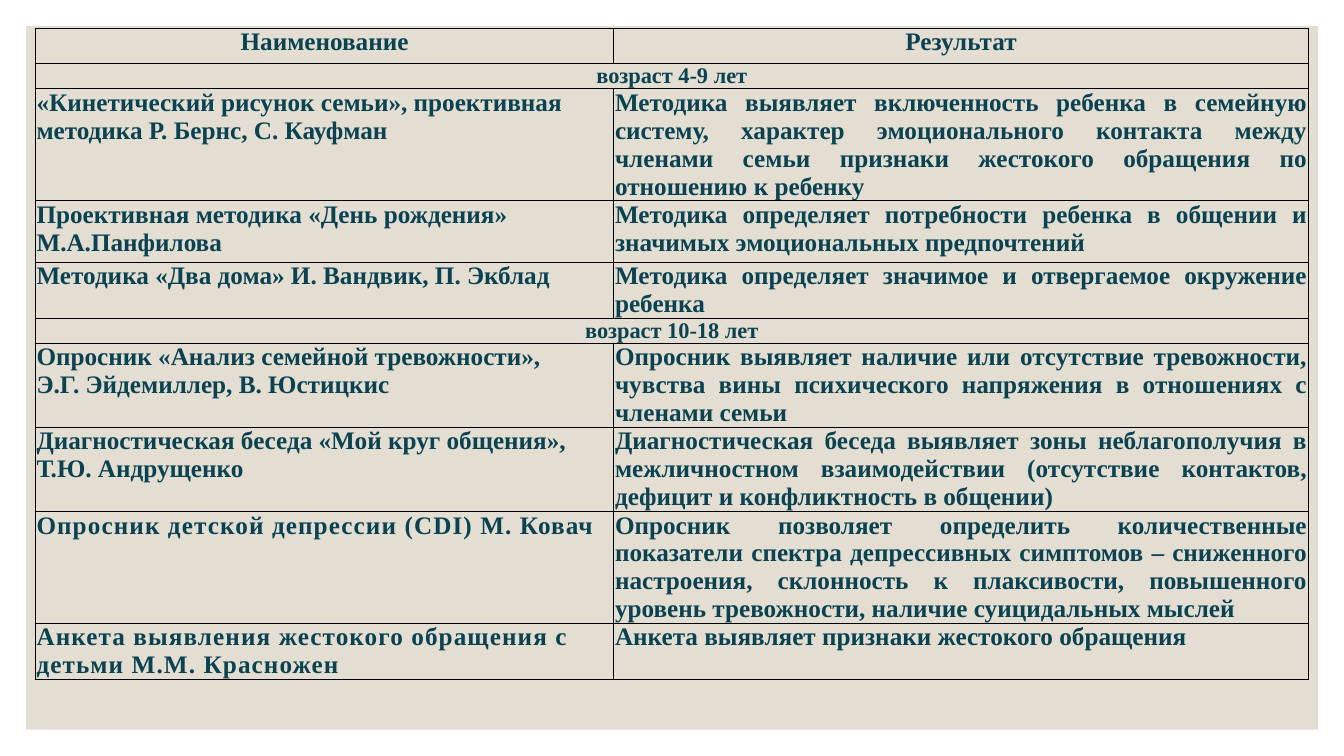
from lxml import etree
from pptx import Presentation
from pptx.dml.color import RGBColor
from pptx.enum.shapes import MSO_SHAPE
from pptx.enum.text import PP_ALIGN
from pptx.oxml.ns import qn
from pptx.util import Cm, Pt

RECT = MSO_SHAPE.RECTANGLE
LEFT, CENTER, JUSTIFY = PP_ALIGN.LEFT, PP_ALIGN.CENTER, PP_ALIGN.JUSTIFY

COLORS = {"panel": "E3DED1", "text": "0A4252", "border": "000000"}
COLUMN_WIDTHS = [14.58, 17.5]
HEADER = ("Наименование", "Результат")
HEADER_HEIGHT, AGE_HEIGHT = 0.9, 0.63
AGE_GROUPS = [
    ("возраст 4-9 лет", [
        (2.82, 0, "«Кинетический рисунок семьи», проективная методика Р. Бернс, С. Кауфман",
         "Методика выявляет включенность ребенка в семейную систему, характер эмоционального "
         "контакта между членами семьи признаки жестокого обращения по отношению к ребенку"),
        (1.55, 0, "Проективная методика «День рождения» М.А.Панфилова",
         "Методика определяет потребности ребенка в общении и значимых эмоциональных предпочтений"),
        (1.41, 0, "Методика «Два дома» И. Вандвик, П. Экблад",
         "Методика определяет значимое и отвергаемое окружение ребенка"),
    ]),
    ("возраст 10-18 лет", [
        (2.12, 0, "Опросник «Анализ семейной тревожности»,\nЭ.Г. Эйдемиллер, В. Юстицкис",
         "Опросник выявляет наличие или отсутствие тревожности, чувства вины психического "
         "напряжения в отношениях с членами семьи"),
        (2.12, 0, "Диагностическая беседа «Мой круг общения»,\nТ.Ю. Андрущенко",
         "Диагностическая беседа выявляет зоны неблагополучия в межличностном взаимодействии "
         "(отсутствие контактов, дефицит и конфликтность в общении)"),
        (2.82, 0.8, "Опросник детской депрессии (CDI) М. Ковач",
         "Опросник позволяет определить количественные показатели спектра депрессивных "
         "симптомов – сниженного настроения, склонность к плаксивости, повышенного уровень "
         "тревожности, наличие суицидальных мыслей"),
        (1.41, 0.8, "Анкета выявления жестокого обращения с детьми М.М. Красножен",
         "Анкета выявляет признаки жестокого обращения"),
    ]),
]


class SlideBuilder:
    """Holds the style and the current slide."""

    def __init__(self, slide, font="Times New Roman"):
        self.slide = slide
        self.font = font

    def panel(self, left, top, width, height):
        sp = self.slide.shapes.add_shape(RECT, Cm(left), Cm(top), Cm(width), Cm(height))
        sp.shadow.inherit = False
        sp.fill.solid()
        sp.fill.fore_color.rgb = RGBColor.from_string(COLORS["panel"])
        sp.line.fill.background()

    def table(self, left, top, widths, heights):
        frame = self.slide.shapes.add_table(
            len(heights), len(widths), Cm(left), Cm(top), Cm(sum(widths)), Cm(sum(heights)))
        table = frame.table
        table.first_row = table.horz_banding = False
        for column, width in zip(table.columns, widths):
            column.width = Cm(width)
        for row, height in zip(table.rows, heights):
            row.height = Cm(height)
            for cell in row.cells:
                self.cell_frame(cell)
        return table

    def cell_frame(self, cell):
        cell.margin_left = cell.margin_right = Cm(0.03)
        cell.margin_top = cell.margin_bottom = 0
        tc_pr = cell._tc.get_or_add_tcPr()
        for side in ("lnL", "lnR", "lnT", "lnB"):
            ln = etree.SubElement(tc_pr, qn(f"a:{side}"), w=str(Pt(1)))
            fill = etree.SubElement(ln, qn("a:solidFill"))
            etree.SubElement(fill, qn("a:srgbClr"), val=COLORS["border"])
        cell.fill.background()

    def cell_text(self, cell, text, align, size=18, spacing=0):
        tf = cell.text_frame
        for i, line in enumerate(text.split("\n")):
            p = tf.add_paragraph() if i else tf.paragraphs[0]
            p.alignment = align
            r = p.add_run()
            r.text = line
            r.font.name = self.font
            r.font.size = Pt(size)
            r.font.bold = True
            r.font.color.rgb = RGBColor.from_string(COLORS["text"])
            if spacing:
                r.font._element.set("spc", str(round(spacing * 100)))


def main():
    prs = Presentation()
    prs.slide_width, prs.slide_height = Cm(33.87), Cm(19.05)
    s = SlideBuilder(prs.slides.add_slide(prs.slide_layouts[6]))
    s.panel(0.66, 0.66, 32.56, 17.73)

    heights = [HEADER_HEIGHT]
    for _, methods in AGE_GROUPS:
        heights += [AGE_HEIGHT] + [method[0] for method in methods]
    table = s.table(0.89, 0.71, COLUMN_WIDTHS, heights)

    for column, title in enumerate(HEADER):
        s.cell_text(table.cell(0, column), title, CENTER)
    row = 1
    for age, methods in AGE_GROUPS:
        table.cell(row, 0).merge(table.cell(row, 1))
        s.cell_text(table.cell(row, 0), age, CENTER, size=16)
        for row, (_, spacing, name, result) in enumerate(methods, row + 1):
            s.cell_text(table.cell(row, 0), name, LEFT, spacing=spacing)
            s.cell_text(table.cell(row, 1), result, JUSTIFY)
        row += 1
    prs.save("out.pptx")


if __name__ == "__main__":
    main()
